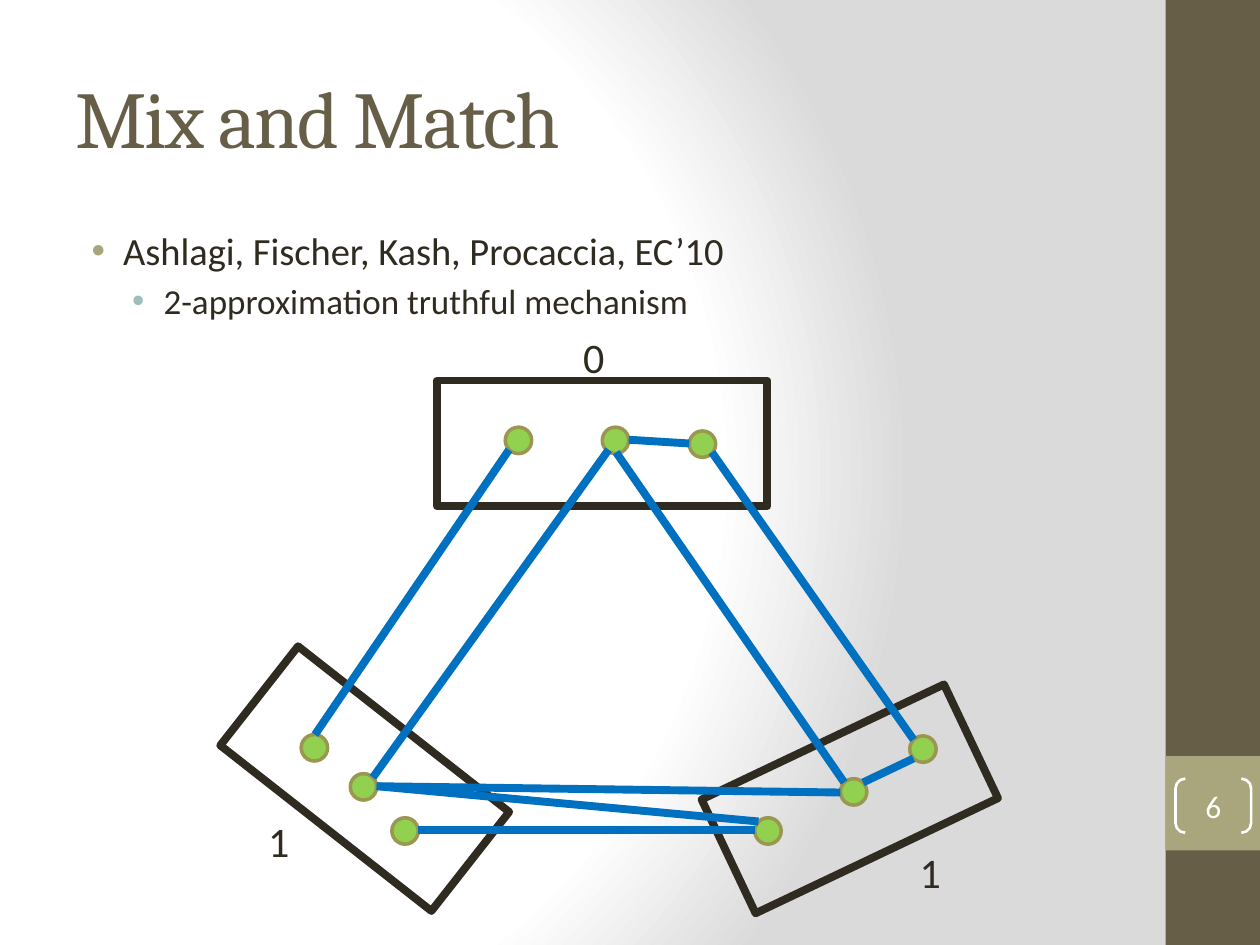
from lxml import etree
from pptx import Presentation
from pptx.dml.color import RGBColor
from pptx.enum.shapes import MSO_CONNECTOR, MSO_SHAPE
from pptx.enum.text import MSO_ANCHOR, PP_ALIGN
from pptx.oxml import parse_xml
from pptx.oxml.ns import qn
from pptx.util import Inches, Pt

RECT = MSO_SHAPE.RECTANGLE
NODE = MSO_SHAPE.FLOWCHART_CONNECTOR
BRACKETS = MSO_SHAPE.DOUBLE_BRACKET
STRAIGHT = MSO_CONNECTOR.STRAIGHT
MIDDLE, TOP = MSO_ANCHOR.MIDDLE, MSO_ANCHOR.TOP
CENTER = PP_ALIGN.CENTER

BROWN, OLIVE, INK, WHITE = "675E47", "A9A57C", "2F2B20", "FFFFFF"
TEAL, BLUE, GREEN, NODE_EDGE = "9CBEBD", "0070C0", "92D050", "9B9650"
NODE_SIZE = 0.21

# left, top, width, rotation
GROUPS = [(5.68, 5.84, 2.13, 334.6), (3.47, 3.02, 2.62, 0), (1.83, 5.68, 2.13, 38.1)]
NODES = [
    (4.01, 3.39), (4.78, 3.39), (5.47, 3.42),
    (2.39, 5.83), (2.78, 6.14), (3.11, 6.49),
    (5.99, 6.49), (6.67, 6.18), (7.22, 5.84),
]
EDGES = [
    ((4.04, 3.57), (2.5, 5.83)),
    ((7.25, 5.87), (5.65, 3.59)),
    ((2.96, 6.17), (4.83, 3.57)),
    ((3.32, 6.59), (5.99, 6.59)),
    ((6.7, 6.21), (4.89, 3.59)),
    ((2.99, 6.24), (6.02, 6.52)),
    ((2.99, 6.24), (6.67, 6.29)),
    ((7.25, 6.02), (6.85, 6.21)),
    ((5.47, 3.52), (4.99, 3.49)),
]
LABELS = [("0", 4.53, 2.58), ("1", 2.03, 6.42), ("1", 7.2, 6.67)]
# text, size, bullet colour, left indent
BULLETS = [
    ("Ashlagi, Fischer, Kash, Procaccia, EC’10", 22, OLIVE, 0.38),
    ("2-approximation truthful mechanism", 20, TEAL, 0.7),
]


def rgb(color):
    return RGBColor.from_string(color)


def set_background(slide):
    """Radial gradient, which python-pptx cannot set directly."""
    fill = slide.background.fill
    fill.gradient()
    grad = slide.background._cSld.find(".//" + qn("a:gradFill"))
    stops = "".join(
        f'<a:gs pos="{pos}000"><a:srgbClr val="{color}"/></a:gs>'
        for pos, color in [(0, WHITE), (75, WHITE), (100, "DADADA")]
    )
    radial = parse_xml(
        '<a:gradFill xmlns:a="http://schemas.openxmlformats.org/drawingml/2006/main"'
        f' rotWithShape="1"><a:gsLst>{stops}</a:gsLst><a:path path="circle">'
        '<a:fillToRect l="20000" t="50000" r="100000" b="50000"/></a:path></a:gradFill>'
    )
    grad.getparent().replace(grad, radial)


def add_shape(slide, kind, box, fill=None, line=None, width=0, rotation=0):
    sp = slide.shapes.add_shape(kind, *map(Inches, box))
    sp.shadow.inherit = False
    sp.rotation = rotation
    if fill:
        sp.fill.solid()
        sp.fill.fore_color.rgb = rgb(fill)
    else:
        sp.fill.background()
    if line:
        sp.line.color.rgb = rgb(line)
        sp.line.width = Pt(width)
    else:
        sp.line.fill.background()
    return sp


def add_edge(slide, start, end):
    c = slide.shapes.add_connector(STRAIGHT, *map(Inches, start + end))
    c.line.color.rgb = rgb(BLUE)
    c.line.width = Pt(4.5)
    etree.SubElement(c._element.spPr, qn("a:effectLst"))


def set_text(p, text, size, color, font="Calibri"):
    p.text = text
    r = p.runs[0]
    r.font.size = Pt(size)
    r.font.name = font
    r.font.color.rgb = rgb(color)
    return r


def add_text_frame(slide, box, anchor=TOP):
    tf = slide.shapes.add_textbox(*map(Inches, box)).text_frame
    tf.word_wrap = True
    tf.vertical_anchor = anchor
    return tf


def set_bullet(p, color, indent):
    pPr = p._p.get_or_add_pPr()
    pPr.set("marL", str(Inches(indent)))
    pPr.set("indent", str(Inches(-0.25)))
    clr = etree.SubElement(pPr, qn("a:buClr"))
    etree.SubElement(clr, qn("a:srgbClr"), val=color)
    etree.SubElement(pPr, qn("a:buFont"), typeface="Arial")
    etree.SubElement(pPr, qn("a:buChar"), char="•")


def add_title(slide):
    tf = add_text_frame(slide, (0.5, 0.3, 8.33, 1.25), MIDDLE)
    r = set_text(tf.paragraphs[0], "Mix and Match", 46, BROWN, "Cambria")
    r.font._element.set("spc", "-100")


def add_bullets(slide):
    tf = add_text_frame(slide, (0.5, 1.75, 8.33, 5.25))
    for i, (text, size, color, indent) in enumerate(BULLETS):
        p = tf.add_paragraph() if i else tf.paragraphs[0]
        set_text(p, text, size, INK)
        p.level = i
        p.space_before = Pt(size * 0.2)
        set_bullet(p, color, indent)


def add_sidebar(slide):
    add_shape(slide, RECT, (9.25, 0, 0.75, 7.5), BROWN)
    add_shape(slide, RECT, (9.25, 6, 0.75, 0.75), OLIVE)
    sp = add_shape(slide, BRACKETS, (9.33, 6.18, 0.6, 0.43), line=WHITE, width=1.5)
    sp.adjustments[0] = 0.18
    tf = sp.text_frame
    tf.margin_left = tf.margin_right = tf.margin_top = tf.margin_bottom = 0
    tf.vertical_anchor = MIDDLE
    set_text(tf.paragraphs[0], "6", 18, WHITE)
    tf.paragraphs[0].alignment = CENTER


def add_graph(slide):
    for left, top, width, rotation in GROUPS:
        add_shape(slide, RECT, (left, top, width, 1), None, INK, 4.5, rotation)
    for left, top in NODES:
        add_shape(slide, NODE, (left, top, NODE_SIZE, NODE_SIZE), GREEN, NODE_EDGE, 2)
    for start, end in EDGES:
        add_edge(slide, start, end)
    for text, left, top in LABELS:
        tf = add_text_frame(slide, (left, top, 0.38, 0.5))
        set_text(tf.paragraphs[0], text, 24, INK)


def main():
    prs = Presentation()
    prs.slide_width, prs.slide_height = Inches(10), Inches(7.5)
    slide = prs.slides.add_slide(prs.slide_layouts[6])
    set_background(slide)
    add_sidebar(slide)
    add_title(slide)
    add_graph(slide)
    add_bullets(slide)
    prs.save("out.pptx")


if __name__ == "__main__":
    main()
